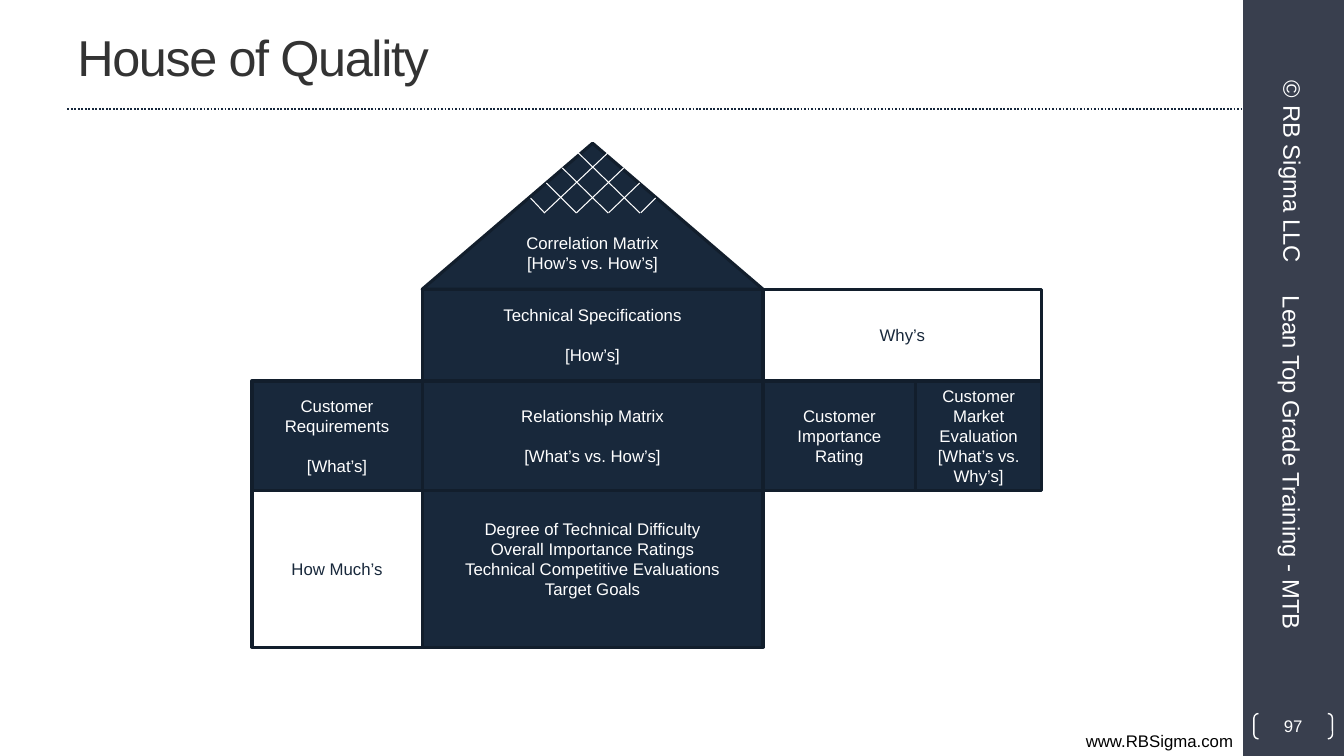
from lxml import etree
from pptx import Presentation
from pptx import util as u
from pptx.dml.color import RGBColor
from pptx.enum import dml, shapes, text
from pptx.oxml.ns import qn

COLORS = {"navy": "18283B", "edge": "121E2C", "rule": "17273B", "sidebar": "393F4E",
          "title": "333333", "white": "FFFFFF", "black": "000000"}
COLORS = {name: RGBColor.from_string(value) for name, value in COLORS.items()}
LEFT, CENTER, RIGHT = text.PP_ALIGN.LEFT, text.PP_ALIGN.CENTER, text.PP_ALIGN.RIGHT
Kind = shapes.MSO_SHAPE

presentation = Presentation()
presentation.slide_width, presentation.slide_height = u.Cm(33.87), u.Cm(19.05)
slide = presentation.slides.add_slide(presentation.slide_layouts[6])


def write(shape, lines, color, size=12, align=CENTER, gap=0):
    """Fill a shape with paragraphs; gap is the space before the last one."""
    frame = shape.text_frame
    frame.word_wrap = True
    frame.vertical_anchor = text.MSO_ANCHOR.MIDDLE
    frame.text = "\n".join(lines)
    for paragraph in frame.paragraphs:
        paragraph.alignment = align
        paragraph.font.name = "Arial"
        paragraph.font.size = u.Pt(size)
        paragraph.font.color.rgb = COLORS[color]
    if gap:
        frame.paragraphs[-1].space_before = u.Pt(gap)


def add_line(x1, y1, x2, y2, color, width):
    line = slide.shapes.add_connector(shapes.MSO_CONNECTOR.STRAIGHT,
                                      u.Cm(x1), u.Cm(y1), u.Cm(x2), u.Cm(y2))
    line.line.color.rgb = COLORS[color]
    line.line.width = u.Pt(width)
    etree.SubElement(line._element.spPr, qn("a:effectLst"))
    return line


# Sidebar and title rule
sidebar = slide.shapes.add_shape(Kind.RECTANGLE, u.Cm(31.33), 0, u.Cm(2.54), u.Cm(19.05))
sidebar.shadow.inherit = False
sidebar.fill.solid()
sidebar.fill.fore_color.rgb = COLORS["sidebar"]
sidebar.line.fill.background()
title_rule = add_line(1.7, 2.74, 31.33, 2.74, "rule", 1.25)
title_rule.line.dash_style = dml.MSO_LINE.ROUND_DOT

# Title, web address and vertical sidebar texts
labels = [
    ("House of Quality", 1.7, 0.08, 28.22, 2.67, 36, "title", LEFT, 0),
    ("www.RBSigma.com", 0, 18.29, 31.33, 0.76, 12, "black", RIGHT, 0),
    ("Lean Top Grade Training - MTB", 27.58, 11.51, 9.96, 1.35, 17, "white", LEFT, 90),
    ("© RB Sigma LLC", 29.72, 3.66, 5.72, 1.35, 17, "white", CENTER, 90),
]
for words, x, y, width, height, size, color, align, rotation in labels:
    label = slide.shapes.add_textbox(u.Cm(x), u.Cm(y), u.Cm(width), u.Cm(height))
    label.rotation = rotation
    write(label, [words], color, size, align)
    if color == "title":
        label.text_frame.paragraphs[0].runs[0].font._element.set("spc", "-100")

# Rooms of the house: column edges, row edges, fill, paragraphs, gap
columns = [6.35, 10.64, 19.23, 23.08, 26.25]
rows = [3.61, 7.29, 9.6, 12.37, 16.31]
rooms = [
    (1, 2, 0, "navy", ["Correlation Matrix [How’s vs. How’s]"], 0),
    (1, 2, 1, "navy", ["Technical Specifications", "[How’s]"], 14),
    (1, 2, 2, "navy", ["Relationship Matrix", "[What’s vs. How’s]"], 14),
    (1, 2, 3, "navy", ["Degree of Technical Difficulty", "Overall Importance Ratings",
                       "Technical Competitive Evaluations", "Target Goals"], 0),
    (0, 1, 2, "navy", ["Customer Requirements", "[What’s]"], 14),
    (0, 1, 3, "white", ["How Much’s"], 0),
    (2, 4, 1, "white", ["Why’s"], 0),
    (2, 3, 2, "navy", ["Customer Importance Rating"], 0),
    (3, 4, 2, "navy", ["Customer Market Evaluation", "[What’s vs. Why’s]"], 0),
]
for first, last, row, fill, lines, gap in rooms:
    kind = Kind.ISOSCELES_TRIANGLE if row == 0 else Kind.RECTANGLE
    room = slide.shapes.add_shape(kind, u.Cm(columns[first]), u.Cm(rows[row]),
                                  u.Cm(columns[last] - columns[first]),
                                  u.Cm(rows[row + 1] - rows[row]))
    room.shadow.inherit = False
    room.fill.solid()
    room.fill.fore_color.rgb = COLORS[fill]
    room.line.color.rgb = COLORS["edge"]
    room.line.width = u.Pt(2.25)
    write(room, lines, "navy" if fill == "white" else "white", gap=gap)
    if len(lines) == 4:
        room.text_frame.margin_bottom = u.Cm(0.63)  # lifts the list above the middle

# Roof lattice: four rising and four falling lines
for step in range(4):
    top = 3.85 + 0.38 * step
    add_line(13.72 + 0.81 * step, 5.36, 15.32 + 0.4 * step, top, "white", 0.75)
    add_line(14.57 - 0.4 * step, top, 16.13 - 0.8 * step, 5.37, "white", 0.75)

# Page number in brackets
page = slide.shapes.add_shape(Kind.DOUBLE_BRACKET, u.Cm(31.6), u.Cm(17.98), u.Cm(1.98), u.Cm(0.64))
page.shadow.inherit = False
page.adjustments[0] = 0.18
page.fill.background()
page.line.color.rgb = COLORS["white"]
page.line.width = u.Pt(1)
write(page, ["97"], "white")
frame = page.text_frame
frame.margin_left = frame.margin_right = frame.margin_top = frame.margin_bottom = 0

presentation.save("out.pptx")
